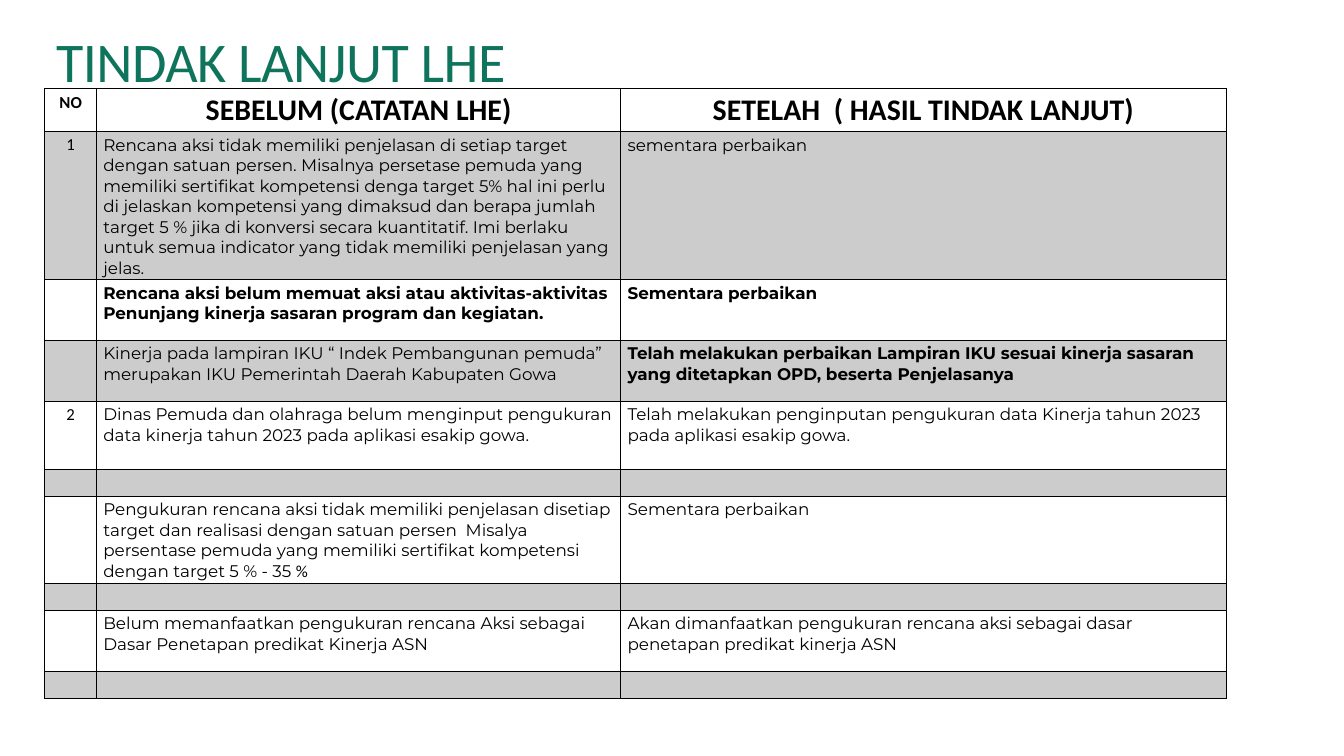
import pptx
import pptx.dml.color
import pptx.enum.text
import pptx.oxml
import pptx.oxml.ns
import pptx.util

RGB = pptx.dml.color.RGBColor
BLACK = RGB(0x00, 0x00, 0x00)
GREEN = RGB(0x0E, 0x74, 0x5B)
LEFT = pptx.enum.text.PP_ALIGN.LEFT
MID = pptx.enum.text.PP_ALIGN.CENTER
JUST = pptx.enum.text.PP_ALIGN.JUSTIFY
Pt = pptx.util.Pt
PX = 9525  # EMU in one px, 96 px to the inch
NS = pptx.oxml.ns.nsdecls("a")


def edge(cell, side, width):
    """Append a black border on one side (L, R, T or B) of a cell."""
    cell._tc.get_or_add_tcPr().append(pptx.oxml.parse_xml(
        f'<a:ln{side} {NS} w="{Pt(width)}"><a:solidFill>'
        f'<a:srgbClr val="{BLACK}"/></a:solidFill></a:ln{side}>'))


def style(par, size, face, bold, color):
    font = par.font
    font.size, font.name, font.bold = Pt(size), face, bold
    font.color.rgb = color


deck = pptx.Presentation()
deck.slide_width, deck.slide_height = 1920 * PX, 1080 * PX
slide = deck.slides.add_slide(deck.slide_layouts[5])

# Title
title = slide.shapes.title
title.left, title.top = 80 * PX, 52 * PX
title.width, title.height = 1014 * PX, 104 * PX
frame = title.text_frame
frame.margin_left = frame.margin_right = 0
frame.margin_top = frame.margin_bottom = 0
frame.vertical_anchor = pptx.enum.text.MSO_ANCHOR.TOP
frame.word_wrap = True
frame.auto_size = pptx.enum.text.MSO_AUTO_SIZE.SHAPE_TO_FIT_TEXT
frame.text = "TINDAK LANJUT LHE"
par = frame.paragraphs[0]
par.alignment = LEFT
par.line_spacing = Pt(61.2)
style(par, 60, "Calibri", False, GREEN)
par.runs[0].font._element.set("spc", "-50")

# Table: number, finding, follow-up
rows = [
    ("NO", "SEBELUM (CATATAN LHE)", "SETELAH  ( HASIL TINDAK LANJUT)"),
    ("1",
     "Rencana aksi tidak memiliki penjelasan di setiap target dengan satuan "
     "persen. Misalnya persetase pemuda yang memiliki sertifikat kompetensi "
     "denga target 5% hal ini perlu di jelaskan kompetensi yang dimaksud dan "
     "berapa jumlah target 5 % jika di konversi secara kuantitatif. Imi "
     "berlaku untuk semua indicator yang tidak memiliki penjelasan yang jelas.",
     "sementara perbaikan"),
    ("",
     "Rencana aksi belum memuat aksi atau aktivitas-aktivitas Penunjang "
     "kinerja sasaran program dan kegiatan.",
     "Sementara perbaikan"),
    ("",
     "Kinerja pada lampiran IKU “ Indek Pembangunan pemuda” merupakan IKU "
     "Pemerintah Daerah Kabupaten Gowa",
     "Telah melakukan perbaikan Lampiran IKU sesuai kinerja sasaran yang "
     "ditetapkan OPD, beserta Penjelasanya"),
    ("2",
     "Dinas Pemuda dan olahraga belum menginput pengukuran data kinerja "
     "tahun 2023 pada aplikasi esakip gowa.",
     "Telah melakukan penginputan pengukuran data Kinerja tahun 2023 pada "
     "aplikasi esakip gowa."),
    ("", "", ""),
    ("",
     "Pengukuran rencana aksi tidak memiliki penjelasan disetiap target dan "
     "realisasi dengan satuan persen  Misalya persentase pemuda yang memiliki "
     "sertifikat kompetensi dengan target 5 % - 35 ",
     "Sementara perbaikan"),
    ("", "", ""),
    ("",
     "Belum memanfaatkan pengukuran rencana Aksi sebagai Dasar Penetapan "
     "predikat Kinerja ASN",
     "Akan dimanfaatkan pengukuran rencana aksi sebagai dasar penetapan "
     "predikat kinerja ASN"),
    ("", "", ""),
]
wide = [74, 749, 865]
high = [61, 211, 87, 87, 97, 38, 124, 38, 87, 38]
strong = {(2, 1), (2, 2), (3, 2)}
spread = {(1, 2), (2, 2)}

table = slide.shapes.add_table(
    len(rows), len(wide), 64 * PX, 127 * PX,
    sum(wide) * PX, sum(high) * PX).table
table.first_row = table.horz_banding = False
for col, width in zip(table.columns, wide):
    col.width = width * PX
for row, height in zip(table.rows, high):
    row.height = height * PX

for r, row in enumerate(rows):
    for c, text in enumerate(row):
        cell = table.cell(r, c)
        for side in "LRTB":
            heavy = (r == 0 and side == "B") or (r == 1 and side == "T")
            edge(cell, side, 2 if heavy else 1)
        if r % 2:
            cell.fill.solid()
            cell.fill.fore_color.rgb = BLACK
            tint = cell._tc.tcPr.find(
                "a:solidFill/a:srgbClr", pptx.oxml.ns._nsmap)
            tint.append(pptx.oxml.parse_xml(f'<a:alpha {NS} val="20000"/>'))
        else:
            cell.fill.background()
        par = cell.text_frame.paragraphs[0]
        if text:
            par.add_run().text = text
        head = r == 0
        par.alignment = (MID if head or c == 0
                         else JUST if (r, c) in spread else LEFT)
        style(par, 32 if head and c else 18,
              "Calibri" if head or c == 0 else "Montserrat",
              head or (r, c) in strong, BLACK)

# The closing percent sign is set in the other face
run = table.cell(6, 1).text_frame.paragraphs[0].add_run()
run.text = "%"
run.font.name = "Calibri"

deck.save("out.pptx")
